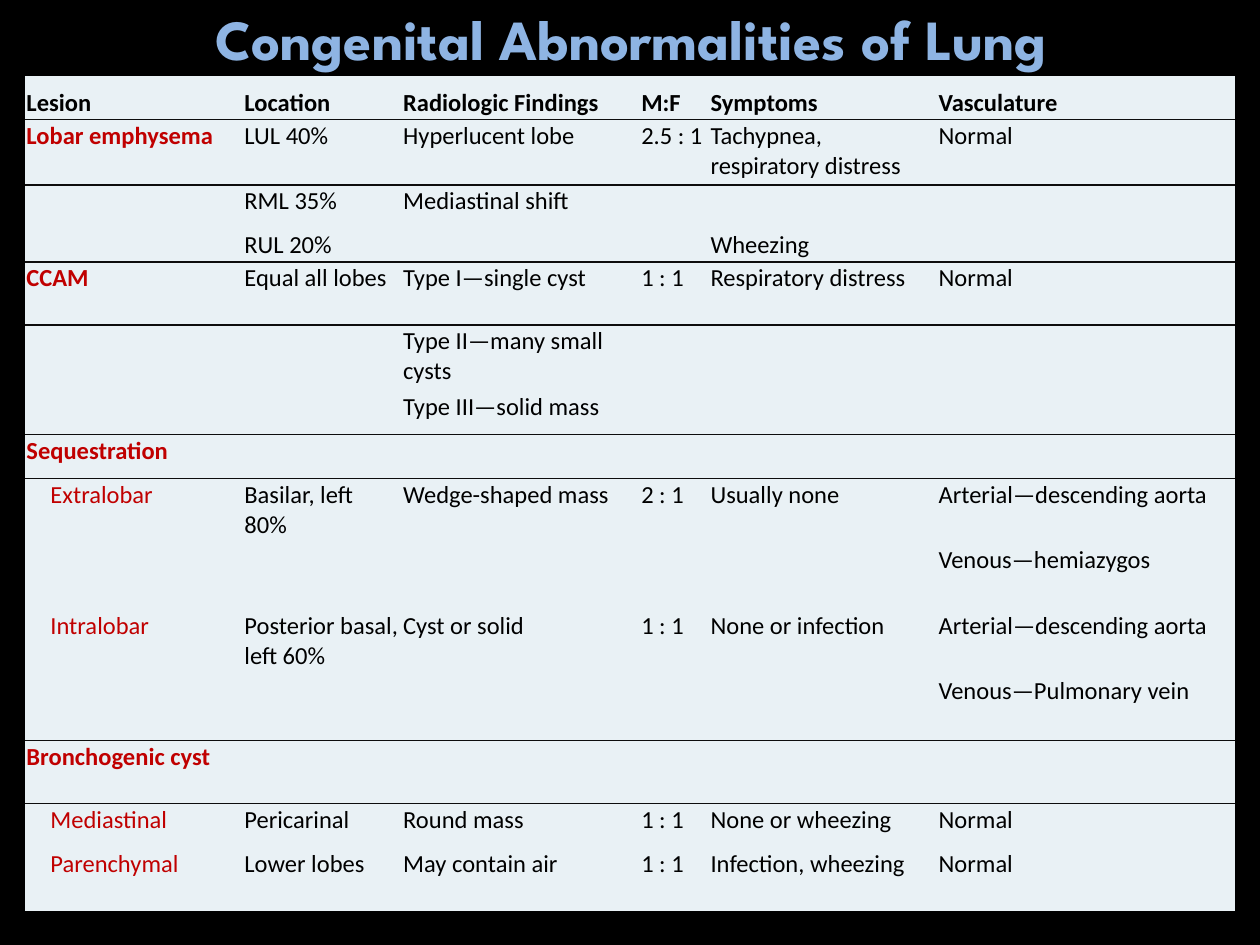
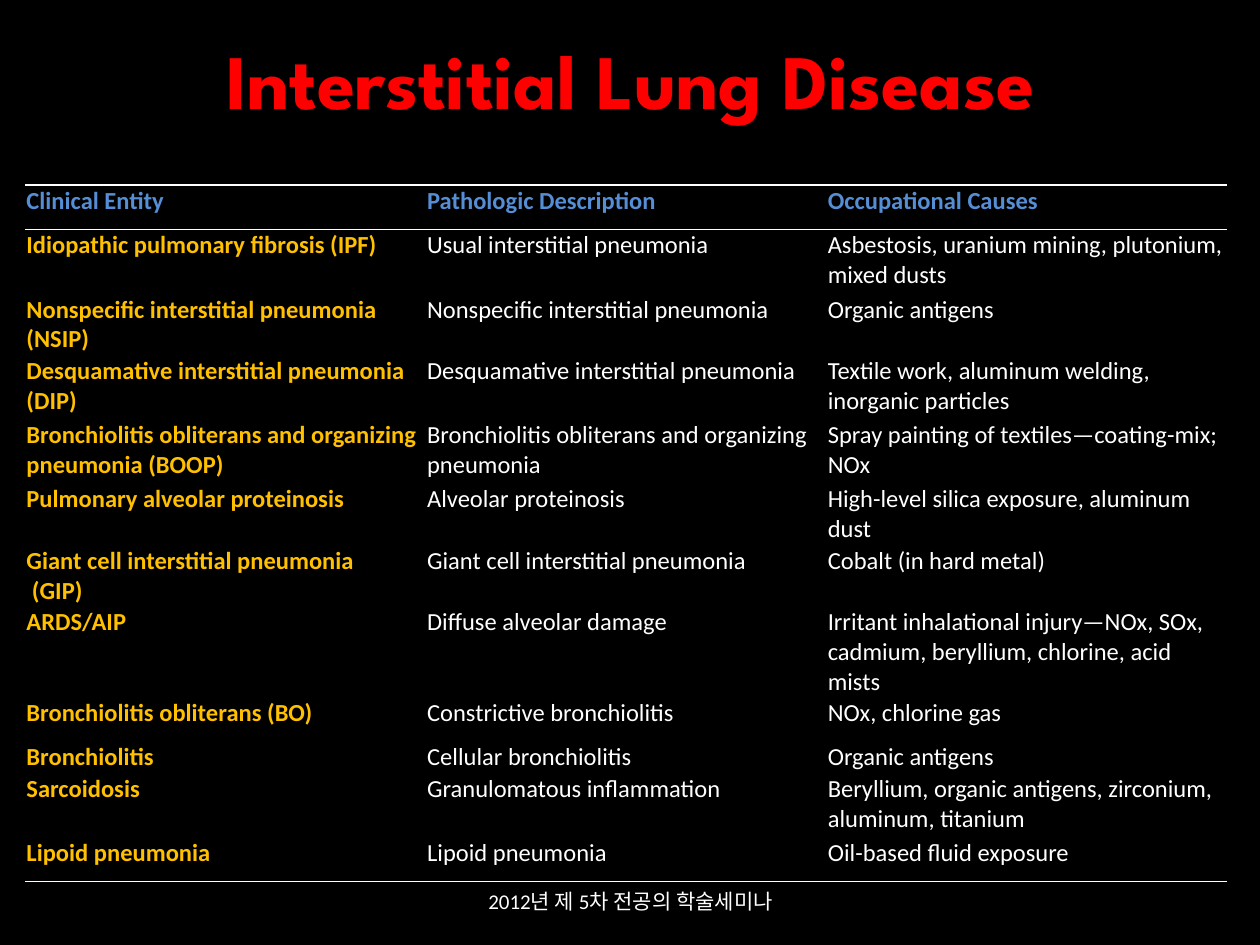
"""Two slides on lung disease, each a title over a ruled table."""
from dataclasses import dataclass

from lxml.etree import SubElement
from pptx import Presentation
from pptx.dml.color import RGBColor as Color
from pptx.enum.text import MSO_ANCHOR as Anchor, PP_ALIGN as Align
from pptx.oxml.ns import qn
from pptx.util import Inches, Pt


@dataclass(frozen=True)
class Theme:
    """Colours, fonts, sizes and the slide grid."""
    page: str = "000000"
    sky: str = "8EB4E3"
    red: str = "FF0000"
    panel: str = "E9F1F5"
    ink: str = "000000"
    rule: str = "0D0D0D"
    lesion: str = "C00000"
    white: str = "FFFFFF"
    header: str = "558ED5"
    entity: str = "FFC000"
    display_font: str = "League Spartan"
    body_font: str = "Calibri"
    wide_title: float = 32.4
    big_title: float = 44
    body: float = 14
    footer: float = 12
    columns: int = 1000
    rows: int = 750
    cell_margin: int = 1
    indent: int = 19


THEME = Theme()
WIDTH, HEIGHT = Inches(10), Inches(7.5)
NO_STYLE = "{2D5ABB26-0587-4C30-8999-92F81FD0307C}"

LUNG_COLUMNS = (173, 126, 189, 55, 181, 236)
LUNG_HEIGHTS = (35, 52, 35, 26, 50, 52, 35, 35, 52, 52, 52, 52, 50, 35, 50)
LUNG_RULES = {1, 2, 4, 5, 7, 8, 12, 13}
LUNG_SUBTYPES = {"Extralobar", "Intralobar", "Mediastinal", "Parenchymal"}
LUNG_ROWS = (
    ("Lesion", "Location", "Radiologic Findings", "M:F", "Symptoms", "Vasculature"),
    ("Lobar emphysema", "LUL 40%", "Hyperlucent lobe", "2.5 : 1",
     "Tachypnea, respiratory distress", "Normal"),
    ("", "RML 35%", "Mediastinal shift", "", "", ""),
    ("", "RUL 20%", "", "", "Wheezing", ""),
    ("CCAM", "Equal all lobes", "Type I—single cyst", "1 : 1",
     "Respiratory distress", "Normal"),
    ("", "", "Type II—many small cysts", "", "", ""),
    ("", "", "Type III—solid mass", "", "", ""),
    ("Sequestration", "", "", "", "", ""),
    ("Extralobar", "Basilar, left 80%", "Wedge-shaped mass", "2 : 1",
     "Usually none", "Arterial—descending aorta"),
    ("", "", "", "", "", "Venous—hemiazygos"),
    ("Intralobar", "Posterior basal, left 60%", "Cyst or solid", "1 : 1",
     "None or infection", "Arterial—descending aorta"),
    ("", "", "", "", "", "Venous—Pulmonary vein"),
    ("Bronchogenic cyst", "", "", "", "", ""),
    ("Mediastinal", "Pericarinal", "Round mass", "1 : 1", "None or wheezing", "Normal"),
    ("Parenchymal", "Lower lobes", "May contain air", "1 : 1",
     "Infection, wheezing", "Normal"),
)

DISEASE_COLUMNS = (318,) * 3
DISEASE_HEIGHTS = (35, 51, 35, 51, 51, 35, 35, 67, 35, 18, 51, 35)
DISEASE_RULES = {0, 1, 12}
DISEASE_ROWS = (
    ("Clinical Entity", "Pathologic Description", "Occupational Causes"),
    ("Idiopathic pulmonary fibrosis (IPF)", "Usual interstitial pneumonia",
     "Asbestosis, uranium mining, plutonium, mixed dusts"),
    ("Nonspecific interstitial pneumonia (NSIP)", "Nonspecific interstitial pneumonia",
     "Organic antigens"),
    ("Desquamative interstitial pneumonia (DIP)", "Desquamative interstitial pneumonia",
     "Textile work, aluminum welding, inorganic particles"),
    ("Bronchiolitis obliterans and organizing pneumonia (BOOP)",
     "Bronchiolitis obliterans and organizing pneumonia",
     "Spray painting of textiles—coating-mix; NOx"),
    ("Pulmonary alveolar proteinosis", "Alveolar proteinosis",
     "High-level silica exposure, aluminum dust"),
    ("Giant cell interstitial pneumonia\n (GIP)", "Giant cell interstitial pneumonia",
     "Cobalt (in hard metal)"),
    ("ARDS/AIP", "Diffuse alveolar damage",
     "Irritant inhalational injury—NOx, SOx, cadmium, beryllium, chlorine, acid mists"),
    ("Bronchiolitis obliterans (BO)", "Constrictive bronchiolitis", "NOx, chlorine gas"),
    ("Bronchiolitis", "Cellular bronchiolitis", "Organic antigens"),
    ("Sarcoidosis", "Granulomatous inflammation",
     "Beryllium, organic antigens, zirconium, aluminum, titanium"),
    ("Lipoid pneumonia", "Lipoid pneumonia", "Oil-based fluid exposure"),
)


def across(count):
    """Return the width of a number of grid columns."""
    return WIDTH * count // THEME.columns


def down(count):
    """Return the height of a number of grid rows."""
    return HEIGHT * count // THEME.rows


def write(frame, text, size=THEME.body, font=THEME.body_font, color=THEME.ink,
          bold=False, align=Align.LEFT):
    """Fill a text frame with one paragraph for each line of text."""
    frame.word_wrap = True
    for number, line in enumerate(text.split("\n")):
        para = frame.add_paragraph() if number else frame.paragraphs[0]
        para.alignment = align
        if not line:
            para._p.get_or_add_endParaRPr().set("sz", str(int(size * 100)))
            continue
        span = para.add_run()
        span.text = line
        span.font.size, span.font.name, span.font.bold = Pt(size), font, bold
        span.font.color.rgb = Color.from_string(color)


def add_label(page, left, top, width, height, text, **style):
    """Add a centred text box placed on the grid."""
    box = page.shapes.add_textbox(across(left), down(top), across(width), down(height))
    box.text_frame.vertical_anchor = Anchor.MIDDLE
    write(box.text_frame, text, align=Align.CENTER, **style)


def add_title(page, text, height, size, color):
    """Add the slide title in the display font."""
    add_label(page, 51, 0, 900, height, text, size=size, color=color,
              font=THEME.display_font, bold=True)


def set_borders(cell, color, top, bottom):
    """Rule the chosen horizontal edges of a cell and clear the others."""
    properties = cell._tc.get_or_add_tcPr()
    for side, ruled in (("L", False), ("R", False), ("T", top), ("B", bottom)):
        line = SubElement(properties, qn(f"a:ln{side}"), w=str(Pt(1)))
        if ruled:
            fill = SubElement(line, qn("a:solidFill"))
            SubElement(fill, qn("a:srgbClr"), val=color)
        else:
            SubElement(line, qn("a:noFill"))


def add_ruled_table(page, top, rows, widths, heights, rules, rule_color, style, fill=None):
    """Add a table with horizontal rules at the numbered row boundaries."""
    frame = page.shapes.add_table(len(rows), len(widths), across(20), down(top),
                                  across(sum(widths)), down(sum(heights)))
    table = frame.table
    table.first_row = table.horz_banding = False
    table._tbl.tblPr.find(qn("a:tableStyleId")).text = NO_STYLE
    for column, width in zip(table.columns, widths):
        column.width = across(width)
    for row, height in zip(table.rows, heights):
        row.height = down(height)
    for r, texts in enumerate(rows):
        for c, text in enumerate(texts):
            cell = table.cell(r, c)
            set_borders(cell, rule_color, r in rules, r + 1 in rules)
            if fill:
                cell.fill.solid()
                cell.fill.fore_color.rgb = Color.from_string(fill)
            else:
                cell.fill.background()
            cell.margin_left = cell.margin_right = across(THEME.cell_margin)
            cell.margin_top = cell.margin_bottom = down(THEME.cell_margin)
            write(cell.text_frame, text, **style(r, c, text))
    return table


def lung_style(row, column, text):
    """Choose the text format of a cell in the lung table."""
    if row == 0:
        return {"bold": True}
    if column == 0:
        return {"color": THEME.lesion, "bold": text not in LUNG_SUBTYPES}
    return {}


def disease_style(row, column, text):
    """Choose the text format of a cell in the disease table."""
    if row == 0:
        return {"color": THEME.header, "bold": True}
    if column == 0:
        return {"color": THEME.entity, "bold": True}
    return {"color": THEME.white}


def add_page(deck):
    """Add a blank slide with the dark background."""
    page = deck.slides.add_slide(deck.slide_layouts[6])
    page.background.fill.solid()
    page.background.fill.fore_color.rgb = Color.from_string(THEME.page)
    return page


def build_lung_page(deck):
    """Build the slide of congenital lung abnormalities."""
    page = add_page(deck)
    add_title(page, "Congenital Abnormalities of Lung", 60, THEME.wide_title, THEME.sky)
    table = add_ruled_table(page, 60, LUNG_ROWS, LUNG_COLUMNS, LUNG_HEIGHTS, LUNG_RULES,
                            THEME.rule, lung_style, fill=THEME.panel)
    for cell in table.rows[0].cells:
        cell.vertical_anchor = Anchor.BOTTOM
    for r, (lesion, *_) in enumerate(LUNG_ROWS):
        if lesion in LUNG_SUBTYPES:
            table.cell(r, 0).margin_left = across(THEME.cell_margin + THEME.indent)


def build_disease_page(deck):
    """Build the slide of interstitial lung diseases."""
    page = add_page(deck)
    add_title(page, "Interstitial Lung Disease", 125, THEME.big_title, THEME.red)
    add_ruled_table(page, 147, DISEASE_ROWS, DISEASE_COLUMNS, DISEASE_HEIGHTS,
                    DISEASE_RULES, THEME.white, disease_style)
    add_label(page, 342, 695, 317, 40, "2012년 제 5차 전공의 학술세미나",
              size=THEME.footer, color=THEME.white)


def main():
    """Build and save the deck."""
    deck = Presentation()
    deck.slide_width, deck.slide_height = WIDTH, HEIGHT
    build_lung_page(deck)
    build_disease_page(deck)
    deck.save("out.pptx")


if __name__ == "__main__":
    main()
